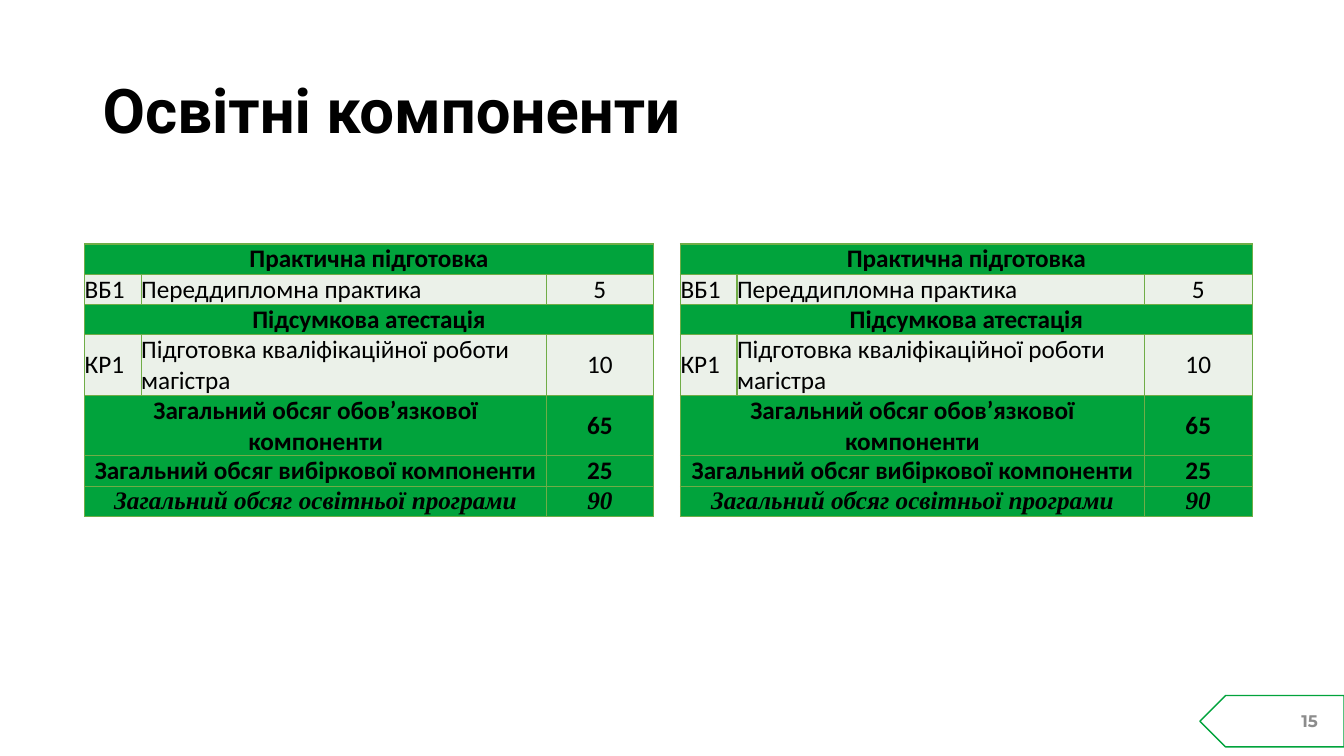
from lxml.etree import SubElement
from pptx import Presentation
from pptx.dml.color import RGBColor
from pptx.enum.shapes import MSO_SHAPE
from pptx.enum.text import MSO_ANCHOR, PP_ALIGN
from pptx.oxml.ns import qn
from pptx.util import Pt

PX = 9144  # EMU per px, 100 px to the inch
GREEN = RGBColor(0x01, 0xA3, 0x3C)
PALE = RGBColor(0xEB, 0xF1, 0xE9)
BORDER = RGBColor(0x70, 0xAD, 0x47)
WHITE = RGBColor(0xFF, 0xFF, 0xFF)
BLACK = RGBColor(0, 0, 0)
GREY = RGBColor(0x8C, 0x8C, 0x8C)


def write(frame, text, align, color=BLACK, **font_format):
    frame.word_wrap = True
    paragraph = frame.paragraphs[0]
    paragraph.alignment = align
    run = paragraph.add_run()
    run.text = text
    run.font.color.rgb = color
    for key, value in font_format.items():
        setattr(run.font, key, value)
    return paragraph


def add_borders(cell):
    properties = cell._tc.get_or_add_tcPr()
    for position, side in enumerate(("lnL", "lnR", "lnT", "lnB")):
        line = SubElement(properties, qn(f"a:{side}"), w=str(Pt(1)))
        fill = SubElement(line, qn("a:solidFill"))
        SubElement(fill, qn("a:srgbClr"), val=str(BORDER))
        properties.insert(position, line)


presentation = Presentation()
presentation.slide_width = 1333 * PX
presentation.slide_height = 750 * PX
slide = presentation.slides.add_slide(presentation.slide_layouts[6])
slide.background.fill.solid()
slide.background.fill.fore_color.rgb = WHITE

page_tag = slide.shapes.add_shape(
    MSO_SHAPE.PENTAGON, 1190 * PX, 690 * PX, 143 * PX, 51 * PX)
page_tag.rotation = 180
page_tag.shadow.inherit = False
page_tag.fill.solid()
page_tag.fill.fore_color.rgb = WHITE
page_tag.line.color.rgb = GREEN
page_tag.line.width = Pt(1)

title = slide.shapes.add_textbox(92 * PX, 40 * PX, 1150 * PX, 145 * PX).text_frame
title.vertical_anchor = MSO_ANCHOR.MIDDLE
heading = write(title, "Освітні компоненти", PP_ALIGN.LEFT,
                name="Roboto", size=Pt(44), bold=True)
heading.line_spacing = 0.9

# Each row holds its cell texts; None continues the merged cell to its left.
component_rows = [
    ("Практична підготовка", None, None),
    ("ВБ1", "Переддипломна практика", "5"),
    ("Підсумкова атестація", None, None),
    ("КР1", "Підготовка кваліфікаційної роботи магістра", "10"),
    ("Загальний обсяг обов’язкової компоненти", None, "65"),
    ("Загальний обсяг вибіркової компоненти", None, "25"),
    ("Загальний обсяг освітньої програми", None, "90"),
]
row_heights = [23] * 4 + [24] * 3
program_total = len(component_rows) - 1
cell_format = dict(margin_left=0, margin_right=0, margin_top=0, margin_bottom=0,
                   vertical_anchor=MSO_ANCHOR.MIDDLE)

for left, column_widths in ((84, (56, 402, 106)), (675, (56, 404, 107))):
    components_frame = slide.shapes.add_table(
        len(component_rows), 3, left * PX, 242 * PX, sum(column_widths) * PX, 270 * PX)
    components = components_frame.table
    for column, width in zip(components.columns, column_widths):
        column.width = width * PX
    for row, height in zip(components.rows, row_heights):
        row.height = height * PX
    components_frame.height = 270 * PX

    for row_index, texts in enumerate(component_rows):
        summary = None in texts
        for column_index, text in enumerate(texts):
            cell = components.cell(row_index, column_index)
            for key, value in cell_format.items():
                setattr(cell, key, value)
            cell.fill.solid()
            cell.fill.fore_color.rgb = GREEN if summary else PALE
            add_borders(cell)
            if text is None:
                continue
            centred = summary or column_index == 2
            is_total = row_index == program_total
            write(cell.text_frame, text, PP_ALIGN.CENTER if centred else PP_ALIGN.LEFT,
                  name="Times New Roman" if is_total else "Calibri",
                  size=Pt(18), bold=summary, italic=is_total)
        if summary:
            last_merged = 1 if texts[2] else 2
            components.cell(row_index, 0).merge(components.cell(row_index, last_merged))

page_number = slide.shapes.add_textbox(1017 * PX, 695 * PX, 300 * PX, 40 * PX).text_frame
page_number.vertical_anchor = MSO_ANCHOR.MIDDLE
write(page_number, "15", PP_ALIGN.RIGHT, GREY, name="Montserrat", size=Pt(12), bold=True)

presentation.save("out.pptx")
